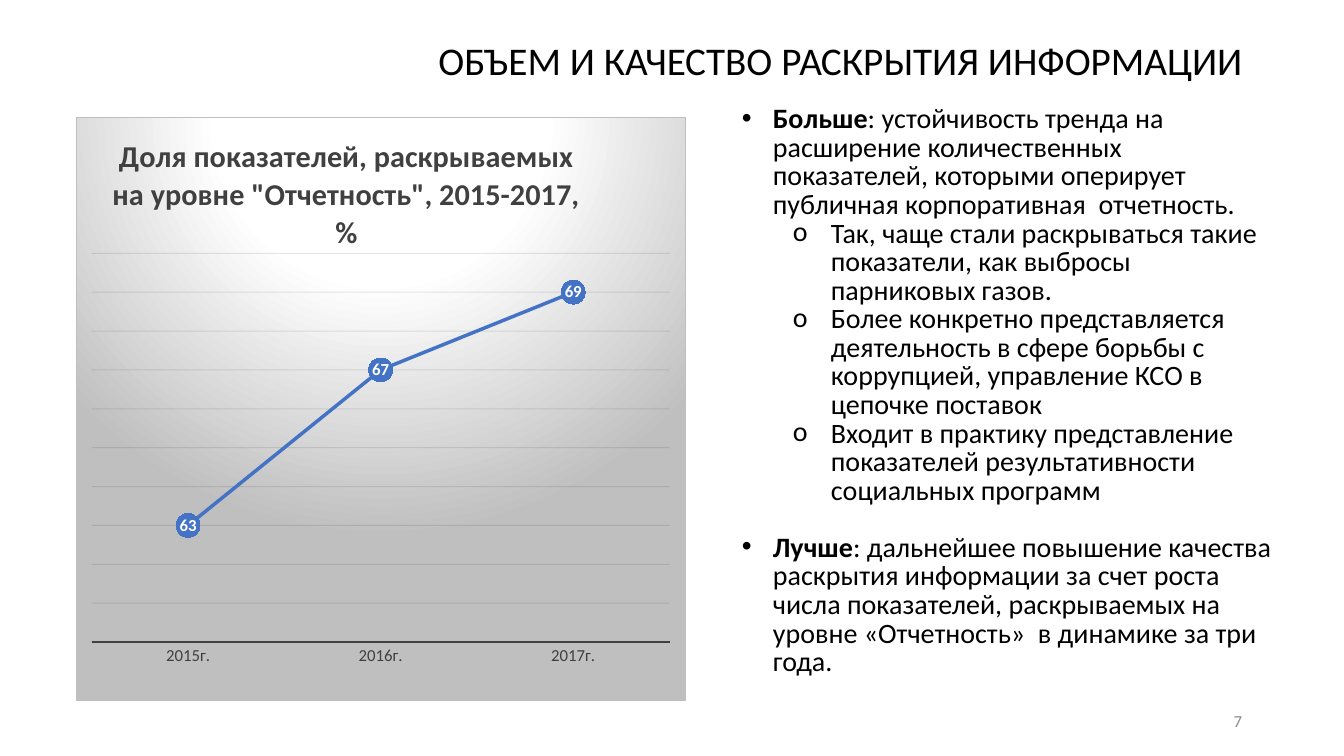
from lxml import etree
from pptx import Presentation
from pptx.chart.data import CategoryChartData
from pptx.dml.color import RGBColor
from pptx.enum.chart import (XL_CHART_TYPE as CT, XL_LABEL_POSITION as LP,
                             XL_MARKER_STYLE as MS, XL_TICK_MARK as TM)
from pptx.enum.text import MSO_ANCHOR as ANC, PP_ALIGN as AL
from pptx.oxml import parse_xml
from pptx.oxml.ns import nsdecls, qn
from pptx.util import Pt

SCALE = 9144000 / 1008  # EMU per px
BLUE, GREY, SILVER = "4472C4", "404040", "BFBFBF"

HEADING = "ОБЪЕМ И КАЧЕСТВО РАСКРЫТИЯ ИНФОРМАЦИИ"
CHART_TITLE = 'Доля показателей, раскрываемых на уровне "Отчетность", 2015-2017, %'
# level, bold lead, text, space before in points
BULLETS = [
    (0, "Больше", ": устойчивость тренда на расширение количественных показателей, "
     "которыми оперирует публичная корпоративная  отчетность.", 0),
    (1, "", "Так, чаще стали раскрываться такие показатели, как выбросы парниковых газов.", 0),
    (1, "", "Более конкретно представляется деятельность в сфере борьбы с коррупцией, "
     "управление КСО в цепочке поставок", 0),
    (1, "", "Входит в практику представление показателей результативности "
     "социальных программ", 0),
    (0, "Лучше", ": дальнейшее повышение качества раскрытия информации за счет роста числа "
     "показателей, раскрываемых на уровне «Отчетность»  в динамике за три года.", 20.4),
]
# by level: left margin px, hanging indent px, bullet, bullet font
LEVELS = [(31, 31, "•", "Arial"), (89, 38, "o", "Calibri")]


def px(n):
    return round(n * SCALE)


def rgb(hex_color):
    return RGBColor.from_string(hex_color)


def assign(obj, **values):
    for name, value in values.items():
        setattr(obj, name, value)


def place(parent, index, **fractions):
    """Give a chart part a manual layout, as fractions of the chart."""
    old = parent.find(qn("c:layout"))
    if old is not None:
        parent.remove(old)
    target = '<c:layoutTarget val="inner"/>' if "w" in fractions else ""
    modes = "".join(f'<c:{k}Mode val="edge"/>' for k in "xy")
    sizes = "".join(f'<c:{k} val="{v}"/>' for k, v in fractions.items())
    parent.insert(index, parse_xml(
        f'<c:layout {nsdecls("c")}><c:manualLayout>{target}{modes}{sizes}'
        '</c:manualLayout></c:layout>'))


class Deck:
    font = "Calibri"

    def __init__(self, width, height):
        self.prs = Presentation()
        assign(self.prs, slide_width=px(width), slide_height=px(height))
        self.slide = self.prs.slides.add_slide(self.prs.slide_layouts[6])

    def style(self, font, size, color, bold=False):
        assign(font, name=self.font, size=Pt(size), bold=bold)
        font.color.rgb = rgb(color)

    def frame(self, box, anchor):
        tf = self.slide.shapes.add_textbox(*map(px, box)).text_frame
        assign(tf, word_wrap=True, vertical_anchor=anchor)
        return tf

    def run(self, p, text, size, color, bold=False):
        r = p.add_run()
        r.text = text
        self.style(r.font, size, color, bold)

    def line(self, box, text, size, color, spacing=1.0):
        p = self.frame(box, ANC.MIDDLE).paragraphs[0]
        assign(p, alignment=AL.RIGHT, line_spacing=spacing)
        self.run(p, text, size, color)

    def bullets(self, box, items, size):
        tf = self.frame(box, ANC.TOP)
        for i, (level, lead, text, before) in enumerate(items):
            p = tf.add_paragraph() if i else tf.paragraphs[0]
            assign(p, level=level, line_spacing=0.85, space_before=Pt(before))
            margin, hang, char, face = LEVELS[level]
            pPr = p._p.get_or_add_pPr()
            pPr.set("marL", str(px(margin)))
            pPr.set("indent", str(-px(hang)))
            etree.SubElement(pPr, qn("a:buFont")).set("typeface", face)
            etree.SubElement(pPr, qn("a:buChar")).set("char", char)
            if lead:
                self.run(p, lead, size, "000000", True)
            self.run(p, text, size, "000000")

    def line_chart(self, box, title, cats, values, low, high):
        data = CategoryChartData()
        data.categories = cats
        data.add_series("Series 1", values)
        chart = self.slide.shapes.add_chart(CT.LINE_MARKERS, *map(px, box), data).chart
        assign(chart, has_legend=False, has_title=True)
        self.style(chart.font, 10, "000000")
        self.chart_title(chart, title)
        self.chart_axes(chart, low, high)
        self.chart_series(chart.plots[0])
        self.chart_background(chart)
        place(chart._chartSpace.chart.plotArea, 0, x=0.025, y=0.233, w=0.949, h=0.667)

    def chart_title(self, chart, text):
        title = chart.chart_title
        p = title.text_frame.paragraphs[0]
        p.alignment = AL.CENTER
        self.run(p, text, 21.6, GREY, True)
        place(title._element, 1, x=0.05, y=0.02)

    def chart_axes(self, chart, low, high):
        cat, val = chart.category_axis, chart.value_axis
        cat.major_tick_mark = TM.NONE
        self.style(cat.tick_labels.font, 12, GREY)
        cat.format.line.width = Pt(1.5)
        cat.format.line.color.rgb = rgb(GREY)
        assign(val, minimum_scale=low, maximum_scale=high, major_unit=1,
               has_major_gridlines=True, visible=False)
        grid = val.major_gridlines.format.line
        grid.width = Pt(0.75)
        grid.color.rgb = rgb("0D0D0D")
        for clr in val.major_gridlines._xAx.iter(qn("a:srgbClr")):
            etree.SubElement(clr, qn("a:alpha")).set("val", "10000")

    def chart_series(self, plot):
        plot.vary_by_categories = False
        series = plot.series[0]
        series.smooth = False
        series.format.line.width = Pt(2.5)
        series.format.line.color.rgb = rgb(BLUE)
        marker = series.marker
        assign(marker, style=MS.CIRCLE, size=17)
        marker.format.fill.solid()
        marker.format.fill.fore_color.rgb = rgb(BLUE)
        marker.format.line.fill.background()
        labels = series.data_labels
        assign(labels, show_value=True, position=LP.CENTER)
        self.style(labels.font, 12, "FFFFFF", True)

    def chart_background(self, chart):
        stops = "".join(f'<a:gs pos="{pos}000"><a:srgbClr val="{color}"/></a:gs>'
                        for pos, color in ((0, "FFFFFF"), (39, "FFFFFF"), (100, SILVER)))
        spPr = parse_xml(
            f'<c:spPr {nsdecls("c", "a")}><a:gradFill><a:gsLst>{stops}</a:gsLst>'
            '<a:path path="circle"><a:fillToRect l="50000" t="-80000" r="50000" b="180000"/>'
            f'</a:path></a:gradFill><a:ln w="{Pt(0.75)}"><a:solidFill>'
            f'<a:srgbClr val="{SILVER}"/></a:solidFill></a:ln></c:spPr>')
        chart._chartSpace.find(qn("c:txPr")).addprevious(spPr)


def main():
    deck = Deck(1344, 756)
    deck.line((93, 39, 1159, 47), HEADING, 28, "000000", 0.9)
    deck.line((950, 701, 302, 40), "7", 12, "8C8C8C")
    deck.bullets((732, 101, 555, 616), BULLETS, 20)
    deck.line_chart((76, 117, 610, 584), CHART_TITLE,
                    ("2015г.", "2016г.", "2017г."), (63, 67, 69), 60, 70)
    deck.prs.save("out.pptx")


if __name__ == "__main__":
    main()
